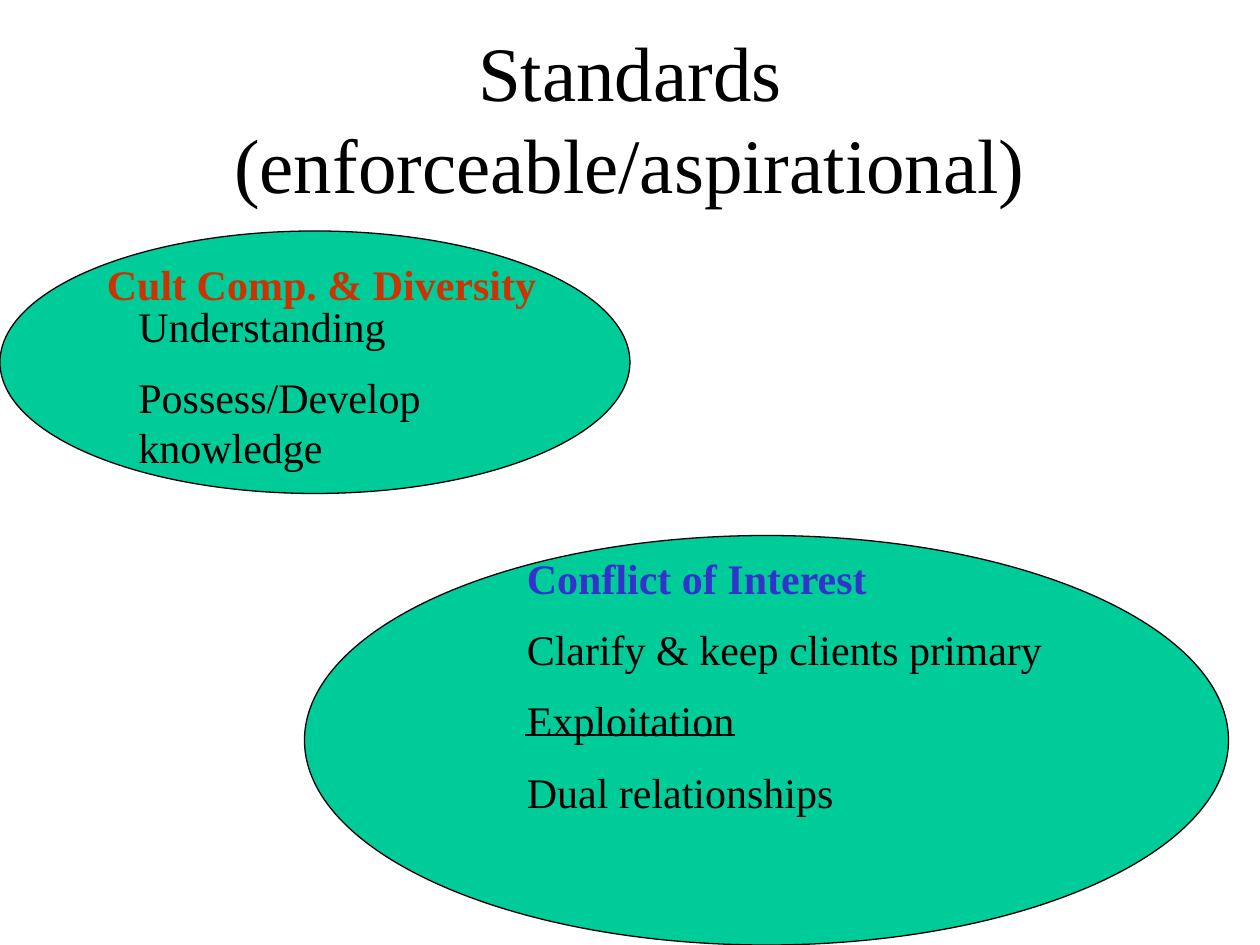
import pptx
import pptx.dml.color
import pptx.enum.shapes
import pptx.enum.text
import pptx.oxml.xmlchemy
import pptx.util
import lxml.etree

PX = 7620  # EMU per px, 120 px to the inch
FONT = "Times New Roman"
BLACK, GREEN, RED, BLUE = "000000", "00CC99", "CC3300", "3333CC"


def color(value):
    return pptx.dml.color.RGBColor.from_string(value)


def write(tf, lines, size, **para_format):
    """Fill a text frame from (text, colour, bold) lines."""
    tf.word_wrap = True
    for i, (text, rgb, bold) in enumerate(lines):
        p = tf.add_paragraph() if i else tf.paragraphs[0]
        for name, value in para_format.items():
            setattr(p, name, value)
        r = p.add_run()
        r.text = text
        font = {"name": FONT, "size": pptx.util.Pt(size), "bold": bold}
        for name, value in font.items():
            setattr(r.font, name, value)
        r.font.color.rgb = color(rgb)


prs = pptx.Presentation()
prs.slide_width, prs.slide_height = 1200 * PX, 900 * PX
s = prs.slides.add_slide(prs.slide_layouts[5])

# Title, raised above the middle of its box by a deep bottom inset
title = s.shapes.title
place = {"left": 90, "top": 80, "width": 1020, "height": 150}
for name, value in place.items():
    setattr(title, name, value * PX)
tf = title.text_frame
tf.auto_size = pptx.enum.text.MSO_AUTO_SIZE.NONE
tf.vertical_anchor = pptx.enum.text.MSO_ANCHOR.MIDDLE
tf.margin_bottom = 94 * PX
write(tf, [("Standards (enforceable/aspirational)", BLACK, False)], 44,
      alignment=pptx.enum.text.PP_ALIGN.CENTER)

# Ovals with their text boxes, from back to front
diversity = s.shapes.add_group_shape().shapes
items = [
    (diversity, (0, 220, 600, 250), None),
    (diversity, (120, 280, 370, 180), [
        ("Understanding", BLACK, False),
        ("Possess/Develop knowledge", BLACK, False)]),
    (s.shapes, (90, 240, 480, 60), [("Cult Comp. & Diversity", RED, True)]),
    (s.shapes, (290, 510, 880, 390), None),
    (s.shapes, (490, 520, 540, 276), [
        ("Conflict of Interest", BLUE, True),
        ("Clarify & keep clients primary", BLACK, False),
        ("Exploitation", BLACK, False),
        ("Dual relationships", BLACK, False)]),
]
for shapes, box, lines in items:
    box = [v * PX for v in box]
    if lines:
        sp = shapes.add_textbox(*box)
        write(sp.text_frame, lines, 24, space_before=pptx.util.Pt(12))
    else:
        sp = shapes.add_shape(pptx.enum.shapes.MSO_SHAPE.OVAL, *box)
        sp.shadow.inherit = False
        sp.fill.solid()
        sp.fill.fore_color.rgb = color(GREEN)
        sp.line.color.rgb = color(BLACK)
        sp.line.width = pptx.util.Pt(0.75)

# Rule under "Exploitation"
rule = s.shapes.add_connector(pptx.enum.shapes.MSO_CONNECTOR.STRAIGHT,
                              *[v * PX for v in (500, 700, 700, 700)])
rule.line.color.rgb = color(BLACK)
rule.line.width = pptx.util.Pt(0.75)
lxml.etree.SubElement(rule._element.spPr, pptx.oxml.ns.qn("a:effectLst"))

prs.save("out.pptx")
